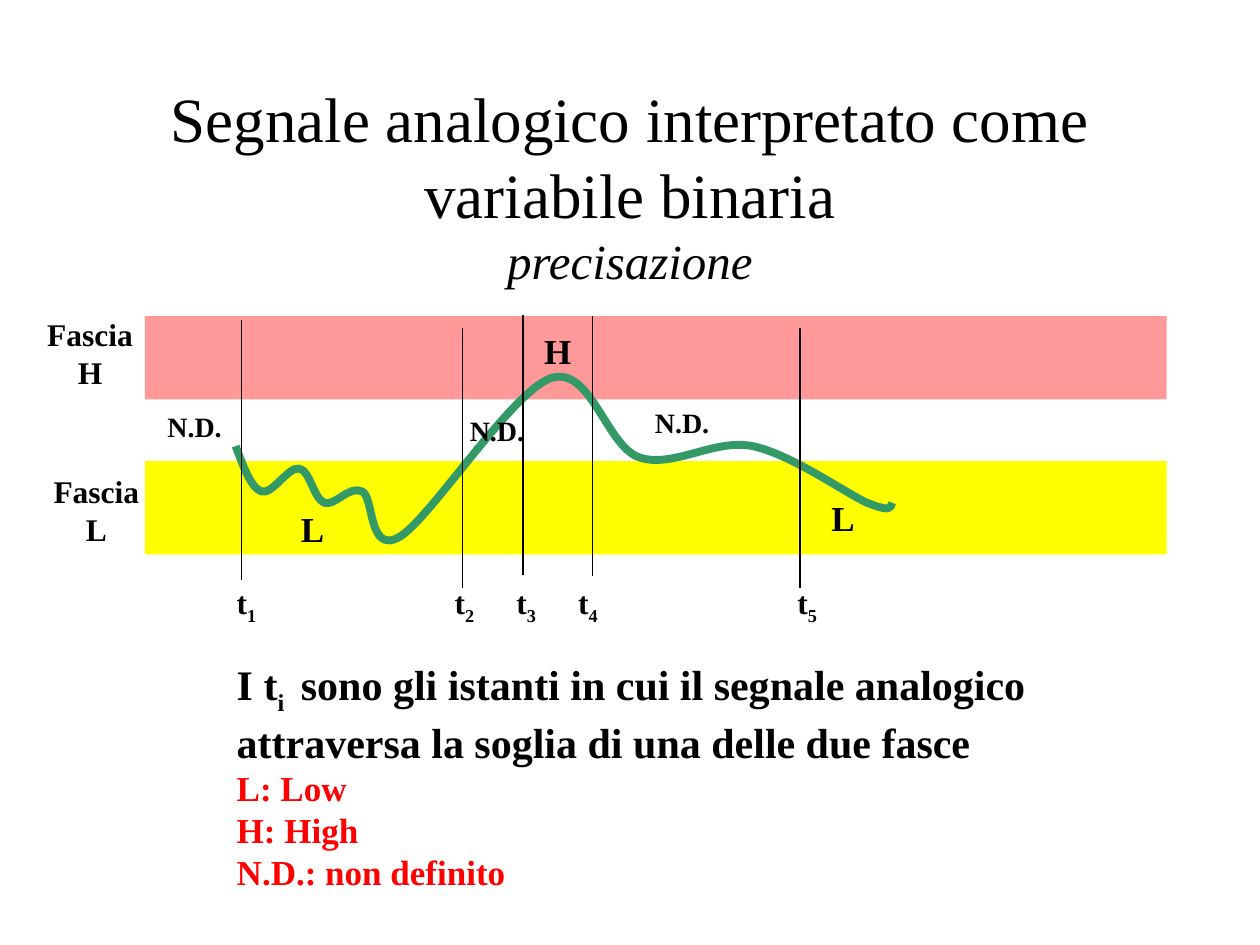
from lxml import etree
from pptx import Presentation
from pptx.dml.color import RGBColor
from pptx.enum.shapes import MSO_CONNECTOR, MSO_SHAPE
from pptx.enum.text import MSO_ANCHOR, MSO_AUTO_SIZE, PP_ALIGN
from pptx.oxml.ns import qn
from pptx.util import Pt

STRAIGHT = MSO_CONNECTOR.STRAIGHT
RECTANGLE = MSO_SHAPE.RECTANGLE
MIDDLE = MSO_ANCHOR.MIDDLE
GROW = MSO_AUTO_SIZE.SHAPE_TO_FIT_TEXT
LEFT, CENTER = PP_ALIGN.LEFT, PP_ALIGN.CENTER

BLACK = RGBColor(0x00, 0x00, 0x00)
RED = RGBColor(0xFF, 0x00, 0x00)
YELLOW = RGBColor(0xFF, 0xFF, 0x00)
PINK = RGBColor(0xFF, 0x99, 0x99)
GREEN = RGBColor(0x33, 0x99, 0x66)
FONT = "Times New Roman"

# Content: all lengths in points
TITLE = "Segnale analogico interpretato come variabile binaria"
SUBTITLE = "precisazione"
BAND_LEFT, BAND_WIDTH = 82.8, 583.9
BANDS = [  # top, height, colour, label, label left, label top
    (263.5, 53.3, YELLOW, "Fascia L", 21.6, 266.4),
    (180.7, 47.5, PINK, "Fascia H", 18, 176.4),
]
# Start point, then two control points and an end point per Bézier segment
SIGNAL = [
    (134.64, 254.9),
    (139, 266.4), (143.3, 278.6), (149.3, 280.8),
    (155.5, 283), (164.9, 266.4), (170.9, 267.8),
    (177.1, 268.6), (179.3, 285.1), (185.3, 287.3),
    (191.5, 289.4), (199.4, 277.2), (206.9, 280.8),
    (213.8, 283.7), (210.2, 317.5), (228.5, 306.7),
    (246.2, 295.9), (292.3, 223.9), (314.9, 216),
    (337.7, 208.8), (346.3, 254.9), (365.3, 261.4),
    (384.5, 267.8), (408.2, 250.6), (429.8, 254.9),
    (451.4, 259.2), (481.7, 280.8), (495.4, 287.3),
    (508.3, 292.3), (509, 290.9), (509.8, 287.3),
]
STATES = [  # text, size, left, top, width, height
    ("H", 20, 303.8, 185, 30.2, 31.7),
    ("L", 20, 164.9, 286.6, 28.1, 31.7),
    ("L", 20, 468, 280.1, 28.1, 31.7),
    ("N.D.", 16, 88.6, 230.4, 46.1, 26.6),
    ("N.D.", 16, 367.2, 228.2, 46.1, 26.6),
    ("N.D.", 16, 261.4, 232.6, 46.1, 26.6),
]
INSTANTS = [  # line x, line top, label left
    (138.2, 182.9, 128.2),
    (264.2, 187.2, 252.7),
    (298.8, 180, 288),
    (338.4, 180.7, 323.3),
    (457.2, 187.2, 448.6),
]
INSTANT_HEIGHT, INSTANT_LABEL_TOP = 148.7, 329.8
EXPLANATION = [
    ("I t", 0),
    ("i ", -25000),
    (" sono gli istanti in cui il segnale analogico attraversa "
     "la soglia di una delle due fasce", 0),
]
LEGEND = ["L: Low", "H: High", "N.D.: non definito"]

prs = Presentation()
prs.slide_width, prs.slide_height = Pt(720), Pt(540)
slide = prs.slides.add_slide(prs.slide_layouts[6])
shapes = slide.shapes


def add_frame(left, top, width, height, wrap=True):
    frame = shapes.add_textbox(Pt(left), Pt(top), Pt(width), Pt(height)).text_frame
    frame.word_wrap = wrap
    frame.auto_size = GROW
    return frame


def fill_paragraph(paragraph, runs, size, color=BLACK, bold=True, align=LEFT):
    """Write (text, baseline) runs that share one font."""
    paragraph.alignment = align
    font = paragraph.font
    font.name, font.size, font.bold = FONT, Pt(size), bold
    font.color.rgb = color
    for text, baseline in runs:
        run = paragraph.add_run()
        run.text = text
        if baseline:
            run.font._element.set("baseline", str(baseline))


# Bands
for top, height, color, *_ in BANDS:
    band = shapes.add_shape(RECTANGLE, Pt(BAND_LEFT), Pt(top), Pt(BAND_WIDTH), Pt(height))
    band.shadow.inherit = False
    band.fill.solid()
    band.fill.fore_color.rgb = color
    band.line.fill.background()

# Signal: each three line steps become one Bézier curve
points = [(Pt(x), Pt(y)) for x, y in SIGNAL]
builder = shapes.build_freeform(*points[0])
builder.add_line_segments(points[1:], close=False)
signal = builder.convert_to_shape()
signal.shadow.inherit = False
signal.fill.background()
signal.line.color.rgb = GREEN
signal.line.width = Pt(4.5)
outline = next(signal._element.iter(qn("a:path")))
steps = outline.findall(qn("a:lnTo"))
for start in range(0, len(steps), 3):
    curve = etree.SubElement(outline, qn("a:cubicBezTo"))
    for step in steps[start:start + 3]:
        curve.append(step[0])
        outline.remove(step)

# Band labels
for *_, label, left, top in BANDS:
    frame = add_frame(left, top, 67, 51)
    fill_paragraph(frame.paragraphs[0], [(label, 0)], 18, align=CENTER)

# Title
title = add_frame(54, 48.2, 612, 114.5)
title.auto_size = MSO_AUTO_SIZE.NONE
title.vertical_anchor = MIDDLE
heading = title.paragraphs[0]
fill_paragraph(heading, [(TITLE, 0)], 36, bold=False, align=CENTER)
heading.add_line_break()
subtitle = heading.add_run()
subtitle.text = SUBTITLE
subtitle.font.size, subtitle.font.italic = Pt(28), True

# Signal states
for text, size, *box in STATES:
    fill_paragraph(add_frame(*box, wrap=False).paragraphs[0], [(text, 0)], size)

# Crossing instants
for number, (x, top, label_left) in enumerate(INSTANTS, start=1):
    instant = shapes.add_connector(STRAIGHT, Pt(x), Pt(top), Pt(x), Pt(top + INSTANT_HEIGHT))
    instant.line.color.rgb = BLACK
    instant.line.width = Pt(0.75)
    etree.SubElement(instant._element.spPr, qn("a:effectLst"))
    frame = add_frame(label_left, INSTANT_LABEL_TOP, 26.6, 28.8, wrap=False)
    fill_paragraph(frame.paragraphs[0], [("t", 0), (str(number), -25000)], 18)

# Explanation and legend
notes = add_frame(128.2, 373, 521.3, 138.2)
fill_paragraph(notes.paragraphs[0], EXPLANATION, 24)
for entry in LEGEND:
    fill_paragraph(notes.add_paragraph(), [(entry, 0)], 20, RED)

prs.save("out.pptx")
